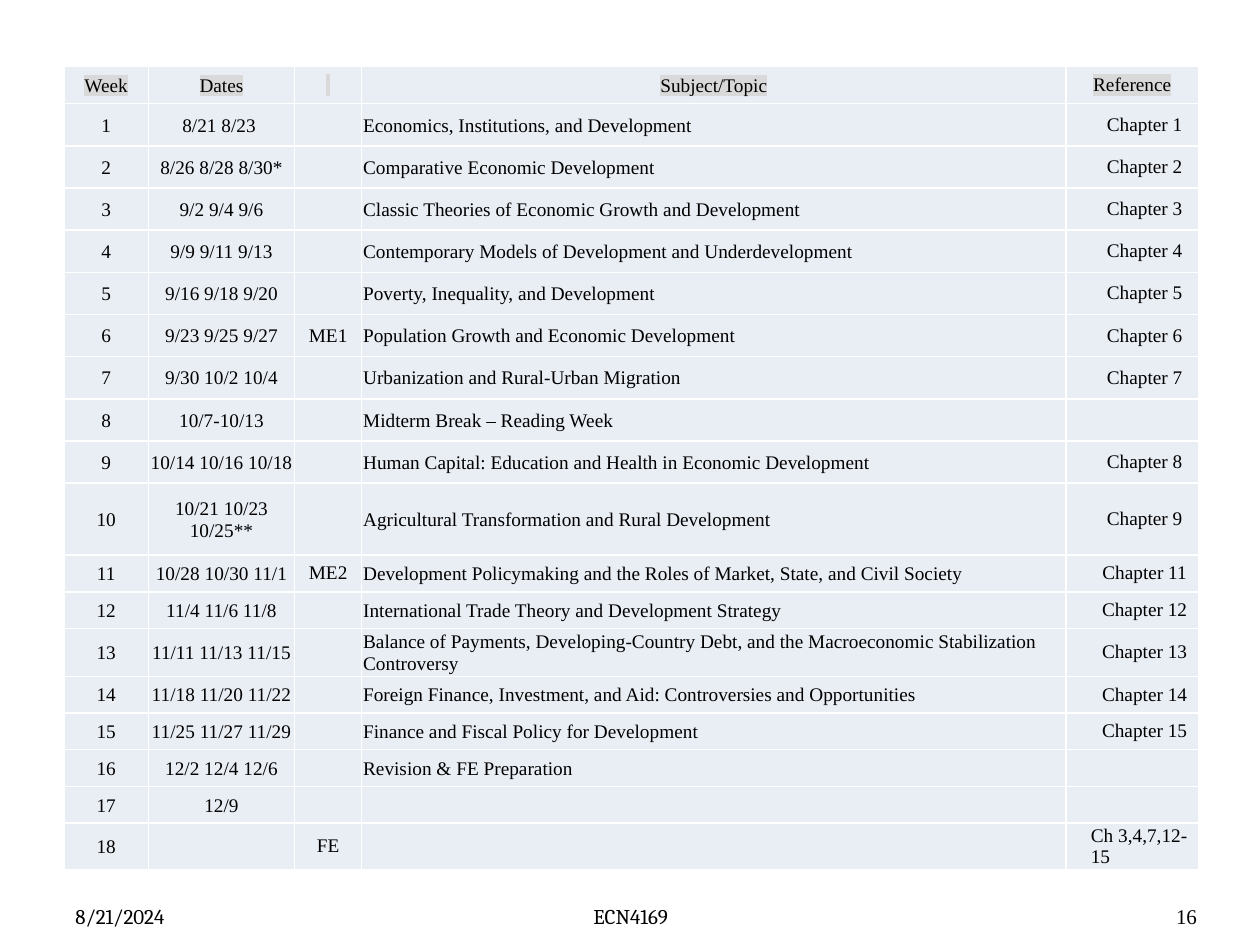
"""Build a course schedule slide with a weekly topic table and a footer."""
from lxml.etree import SubElement
from pptx import Presentation
from pptx.dml.color import RGBColor
from pptx.enum.text import MSO_ANCHOR as Anchor, PP_ALIGN as Align
from pptx.oxml.ns import qn
from pptx.util import Cm, Pt

SERIF = "Times New Roman"
BLACK, WHITE, CELL, HIGHLIGHT = "000000", "FFFFFF", "E9EDF4", "D9D9D9"
HEADER = ("Week", "Dates", " ", "Subject/Topic", "Reference")
WEEKS = [
    ("8/21 8/23 ", "", "Economics, Institutions, and Development", "Chapter 1"),
    ("8/26 8/28 8/30*", "", "Comparative Economic Development", "Chapter 2"),
    ("9/2 9/4 9/6", "", "Classic Theories of Economic Growth and Development", "Chapter 3"),
    ("9/9 9/11 9/13", "", "Contemporary Models of Development and Underdevelopment", "Chapter 4"),
    ("9/16 9/18 9/20", "", "Poverty, Inequality, and Development", "Chapter 5"),
    ("9/23 9/25 9/27", "ME1", "Population Growth and Economic Development", "Chapter 6"),
    ("9/30 10/2 10/4", "", "Urbanization and Rural-Urban Migration", "Chapter 7"),
    ("10/7-10/13", "", "Midterm Break – Reading Week", ""),
    ("10/14 10/16 10/18", "", "Human Capital: Education and Health in Economic Development", "Chapter 8"),
    ("10/21 10/23 10/25**", "", "Agricultural Transformation and Rural Development", "Chapter 9"),
    ("10/28 10/30 11/1", "ME2",
     "Development Policymaking and the Roles of Market, State, and Civil Society", "Chapter 11"),
    ("11/4 11/6 11/8", "", "International Trade Theory and Development Strategy", "Chapter 12"),
    ("11/11 11/13 11/15", "",
     "Balance of Payments, Developing-Country Debt, and the Macroeconomic Stabilization Controversy",
     "Chapter 13"),
    ("11/18 11/20 11/22", "",
     "Foreign Finance, Investment, and Aid: Controversies and Opportunities", "Chapter 14"),
    ("11/25 11/27 11/29", "", "Finance and Fiscal Policy for Development", "Chapter 15"),
    ("12/2 12/4 12/6", "", "Revision & FE Preparation", ""),
    ("12/9", "", "", ""),
    ("", "FE", "", "Ch 3,4,7,12-15"),
]
COL_WIDTHS = (1.7, 2.95, 1.35, 14.2, 2.67)
ROW_HEIGHTS = [0.76] + [0.85] * 9 + [1.45] + [0.74] * 8
EXAM, TOPIC, REFERENCE = 2, 3, 4
FOOTER = [
    ("8/21/2024", 1.27, 5.92, Align.LEFT, "Cambria", 0.25),
    ("ECN4169", 8.69, 8.05, Align.CENTER, "Cambria", 0.25),
    ("16", 22.02, 2.11, Align.RIGHT, SERIF, 0),
]


def color(hex_value):
    return RGBColor.from_string(hex_value)


def style_text(p, size, font, align):
    p.alignment = align
    for r in p.runs:
        r.font.size, r.font.name = Pt(size), font
        r.font.color.rgb = color(BLACK)


def highlight(r):
    latin = r.font._element.find(qn("a:latin"))
    mark = SubElement(r.font._element, qn("a:highlight"))
    SubElement(mark, qn("a:srgbClr"), val=HIGHLIGHT)
    latin.addprevious(mark)


def add_borders(cell):
    tc_pr = cell._tc.get_or_add_tcPr()
    for i, side in enumerate("LRTB"):
        ln = SubElement(tc_pr, qn(f"a:ln{side}"), w=str(Pt(1)))
        SubElement(SubElement(ln, qn("a:solidFill")), qn("a:srgbClr"), val=WHITE)
        tc_pr.insert(i, ln)


def fill_cell(cell, text, row, col):
    plain = col in (EXAM, REFERENCE)
    cell.margin_left = cell.margin_right = cell.margin_top = Cm(0 if plain else 0.03)
    cell.margin_bottom = 0
    cell.vertical_anchor = Anchor.MIDDLE
    cell.fill.solid()
    cell.fill.fore_color.rgb = color(CELL)
    add_borders(cell)
    p = cell.text_frame.paragraphs[0]
    p.text = text
    last_reference = row == len(WEEKS) and col == REFERENCE
    left = last_reference or (row > 0 and col == TOPIC)
    style_text(p, 11, SERIF, Align.LEFT if left else Align.CENTER)
    if row and col == REFERENCE:
        p._p.get_or_add_pPr().set("marL", str(Cm(0.5)))
    if not text:
        SubElement(p._p, qn("a:endParaRPr"), sz="1100")
    if row == 0 and col != REFERENCE:
        highlight(p.runs[0])
    elif row == 0:
        highlight(p.runs[0])


def add_schedule(s):
    rows = [HEADER] + [(str(n), *week) for n, week in enumerate(WEEKS, 1)]
    frame = s.shapes.add_table(len(rows), len(HEADER), Cm(1.29), Cm(1.33),
                               Cm(sum(COL_WIDTHS)), Cm(sum(ROW_HEIGHTS)))
    table = frame.table
    for column, width in zip(table.columns, COL_WIDTHS):
        column.width = Cm(width)
    for i, (values, height) in enumerate(zip(rows, ROW_HEIGHTS)):
        table.rows[i].height = Cm(height)
        for j, text in enumerate(values):
            fill_cell(table.cell(i, j), text, i, j)


def add_footer(s):
    for text, left, width, align, font, margin in FOOTER:
        tf = s.shapes.add_textbox(Cm(left), Cm(17.83), Cm(width), Cm(1.02)).text_frame
        tf.word_wrap = True
        tf.vertical_anchor = Anchor.BOTTOM
        tf.margin_left = tf.margin_right = Cm(margin)
        tf.text = text
        style_text(tf.paragraphs[0], 12, font, align)


def main():
    prs = Presentation()
    prs.slide_width, prs.slide_height = Cm(25.4), Cm(19.05)
    s = prs.slides.add_slide(prs.slide_layouts[6])
    add_footer(s)
    add_schedule(s)
    prs.save("out.pptx")


if __name__ == "__main__":
    main()
